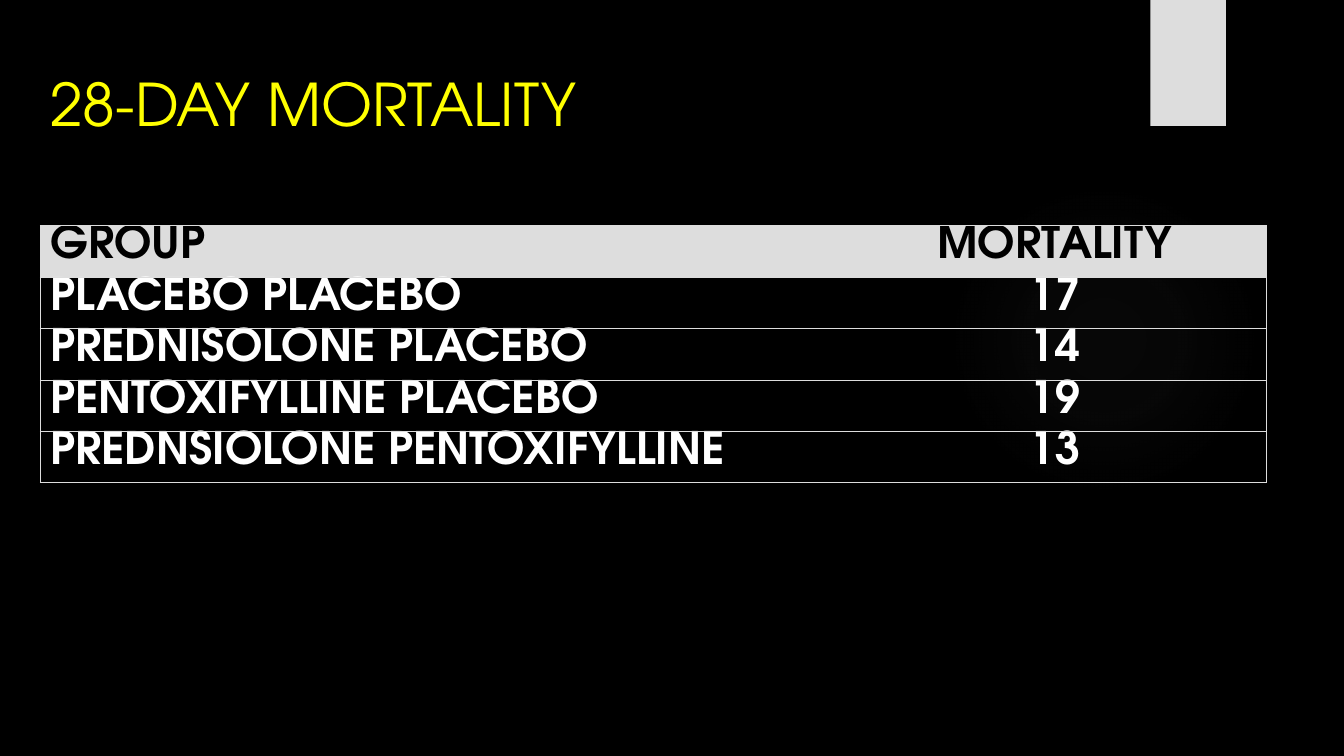
from lxml import etree
from pptx import Presentation
from pptx.dml.color import RGBColor
from pptx.enum import shapes, text
from pptx.oxml import ns
from pptx.util import Inches, Pt

TITLE = "28-DAY MORTALITY"
ROWS = [
    ("GROUP", "MORTALITY"),
    ("PLACEBO PLACEBO", "17"),
    ("PREDNISOLONE PLACEBO", "14"),
    ("PENTOXIFYLLINE PLACEBO", "19"),
    ("PREDNSIOLONE PENTOXIFYLLINE", "13"),
]
WIDTHS = (7.97, 4.19)
ROW_H = 0.51
FONT = "TeX Gyre Adventor"
BLACK, WHITE, GREY, YELLOW = "000000", "FFFFFF", "DDDDDD", "FFFF00"
GLOW = [(0, 7), (36, 6), (69, 0), (100, 0)]  # stop, opacity in percent


def paint(fill, color):
    fill.solid()
    fill.fore_color.rgb = RGBColor.from_string(color)


def style(par, size, color, bold=False):
    for run in par.runs:
        run.font.name = FONT
        run.font.size = Pt(size)
        run.font.bold = bold
        paint(run.font.fill, color)


def add(parent, tag, **attrs):
    """Append a DrawingML element and return it."""
    return etree.SubElement(parent, ns.qn("a:" + tag), attrs)


def shape(kind, left, top, width, height):
    item = slide.shapes.add_shape(kind, *map(Inches, (left, top, width, height)))
    item.shadow.inherit = False
    item.line.fill.background()
    return item


def fade(item):
    """Fill a shape with a soft radial glow."""
    item.fill.background()
    old = item._element.spPr.find(ns.qn("a:noFill"))
    grad = etree.Element(ns.qn("a:gradFill"), rotWithShape="1")
    stops = add(grad, "gsLst")
    for pos, alpha in GLOW:
        stop = add(stops, "gs", pos=str(pos * 1000))
        color = add(stop, "srgbClr", val="666666")
        add(color, "alpha", val=str(alpha * 1000))
    route = add(grad, "path", path="circle")
    add(route, "fillToRect", l="50000", t="50000", r="50000", b="50000")
    old.getparent().replace(old, grad)


def frame(cell, col):
    """Rule a cell above and below, and on the outer side only."""
    outer = "L" if col == 0 else "R"
    props = cell._tc.get_or_add_tcPr()
    for side in "LRTB":
        line = add(props, "ln" + side, w=str(Pt(0.75)))
        if side in "TB" + outer:
            add(add(line, "solidFill"), "srgbClr", val=GREY)
        else:
            add(line, "noFill")


deck = Presentation()
deck.slide_width, deck.slide_height = Inches(13.33), Inches(7.5)
slide = deck.slides.add_slide(deck.slide_layouts[5])
paint(slide.background.fill, BLACK)

fade(shape(shapes.MSO_SHAPE.OVAL, 9.41, 1.83, 3.08, 3.08))
tab = shape(shapes.MSO_SHAPE.RECTANGLE, 11.41, 0, 0.75, 1.25)
paint(tab.fill, GREY)

title = slide.shapes.title
title.left, title.top = Inches(0.4), Inches(0.62)
title.width, title.height = Inches(10.29), Inches(1.53)
title.text_frame.text = TITLE
title.text_frame.vertical_anchor = text.MSO_ANCHOR.TOP
title.text_frame.paragraphs[0].alignment = text.PP_ALIGN.LEFT
style(title.text_frame.paragraphs[0], 42, YELLOW)

holder = slide.shapes.add_table(
    len(ROWS), len(WIDTHS), Inches(0.4), Inches(2.24),
    Inches(sum(WIDTHS)), Inches(ROW_H * len(ROWS)))
table = holder.table
table.first_row = table.horz_banding = False
for col, width in enumerate(WIDTHS):
    table.columns[col].width = Inches(width)
for row, values in enumerate(ROWS):
    table.rows[row].height = Inches(ROW_H)
    for col, value in enumerate(values):
        cell = table.cell(row, col)
        cell.margin_top = cell.margin_bottom = 0
        cell.vertical_anchor = text.MSO_ANCHOR.TOP
        frame(cell, col)
        if row == 0:
            paint(cell.fill, GREY)
        else:
            cell.fill.background()
        cell.text_frame.text = value
        par = cell.text_frame.paragraphs[0]
        par.alignment = text.PP_ALIGN.CENTER if col else text.PP_ALIGN.LEFT
        style(par, 32, BLACK if row == 0 else WHITE, bold=True)

deck.save("out.pptx")
